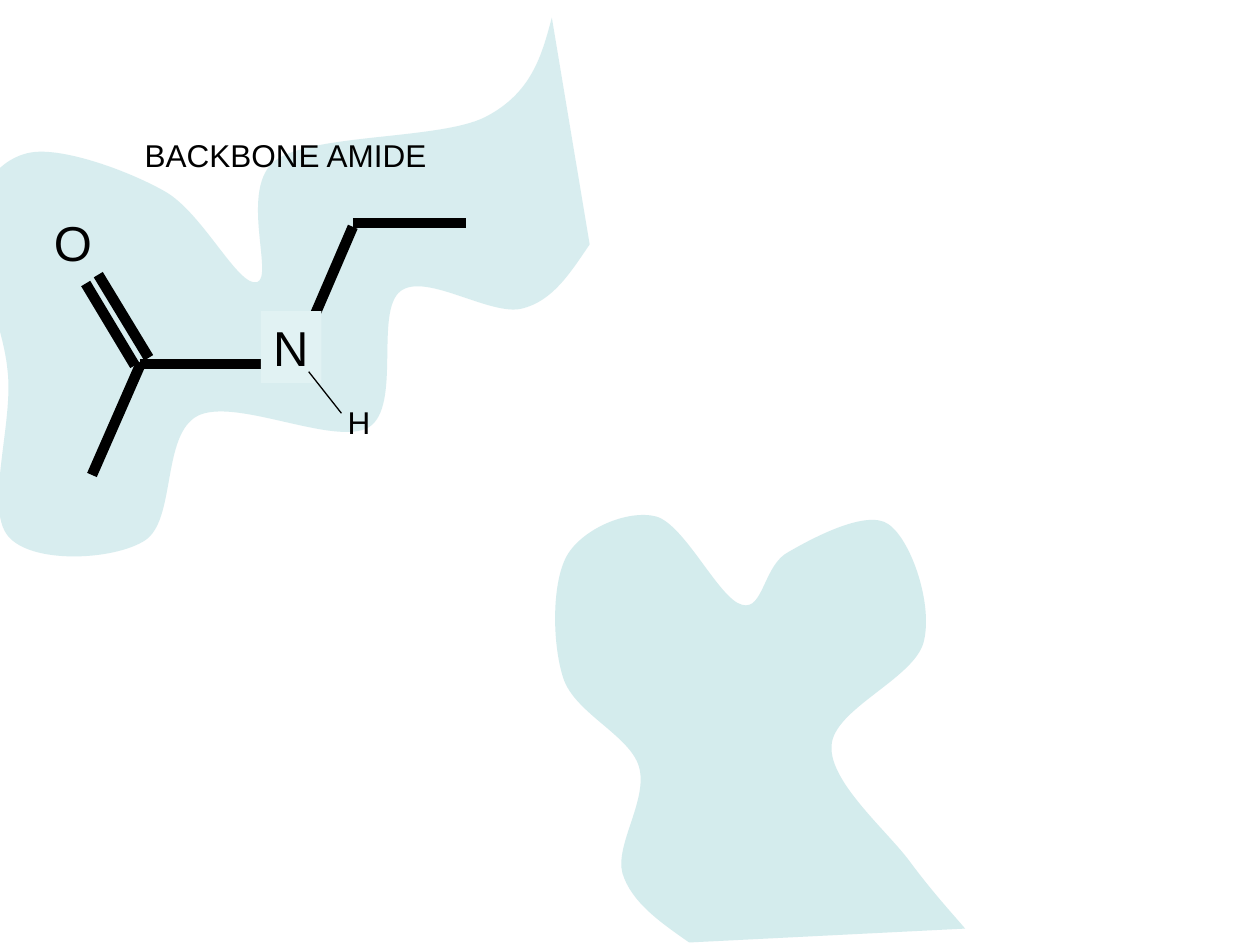
from lxml.etree import SubElement
from pptx import Presentation
from pptx.dml.color import RGBColor
from pptx.enum.shapes import MSO_CONNECTOR, MSO_SHAPE
from pptx.enum.text import MSO_AUTO_SIZE, PP_ALIGN
from pptx.oxml.ns import qn
from pptx.util import Inches, Pt

COLORS = {"surface": "C9E7E9", "nitrogen": "E1F2F3", "ink": "000000"}

AMIDE_POCKET = [
    (4.68, 1.94), (4.53, 2.16), (4.39, 2.39), (4.14, 2.45),
    (3.89, 2.51), (3.38, 2.16), (3.18, 2.31),
    (2.97, 2.47), (3.19, 3.22), (2.93, 3.39),
    (2.66, 3.55), (1.87, 3.15), (1.57, 3.3),
    (1.28, 3.45), (1.4, 4.13), (1.15, 4.29),
    (0.9, 4.45), (0.24, 4.48), (0.06, 4.25),
    (-0.12, 4.02), (0.11, 3.35), (0.06, 2.94),
    (0.02, 2.52), (-0.24, 2.06), (-0.21, 1.77),
    (-0.18, 1.49), (0, 1.25), (0.25, 1.21),
    (0.5, 1.17), (1.01, 1.35), (1.31, 1.52),
    (1.61, 1.69), (1.89, 2.28), (2.04, 2.24),
    (2.18, 2.2), (1.89, 1.49), (2.19, 1.27),
    (2.49, 1.06), (3.49, 1.11), (3.85, 0.93),
    (4.22, 0.74), (4.3, 0.44), (4.38, 0.14),
]
LOWER_POCKET = [
    (5.47, 7.48), (5.24, 7.32), (5.01, 7.16), (4.94, 6.93),
    (4.88, 6.7), (5.15, 6.34), (5.07, 6.08),
    (4.99, 5.83), (4.56, 5.66), (4.47, 5.38),
    (4.38, 5.1), (4.38, 4.62), (4.5, 4.41),
    (4.62, 4.2), (4.98, 4.04), (5.21, 4.1),
    (5.44, 4.17), (5.71, 4.76), (5.89, 4.8),
    (6.06, 4.85), (6.06, 4.48), (6.26, 4.38),
    (6.45, 4.27), (6.88, 4.04), (7.05, 4.16),
    (7.23, 4.28), (7.41, 4.8), (7.33, 5.1),
    (7.25, 5.39), (6.61, 5.63), (6.6, 5.92),
    (6.58, 6.21), (7.06, 6.61), (7.23, 6.85),
    (7.41, 7.09), (7.54, 7.23), (7.66, 7.37),
]
BACKBONE_BONDS = [
    ((1.11, 2.89), (2.34, 2.89)),
    ((2.34, 2.87), (2.8, 1.8)),
    ((1.12, 2.88), (0.73, 3.77)),
    ((1.07, 2.9), (0.68, 2.25)),
    ((1.18, 2.84), (0.78, 2.18)),
]


def rgb(name):
    """Return the named palette colour."""
    return RGBColor.from_string(COLORS[name])


def add_pocket(shapes, points, opacity):
    """Add a translucent outline of cubic curves through the points."""
    (start_x, start_y), *controls = [(Inches(x), Inches(y)) for x, y in points]
    builder = shapes.build_freeform(start_x, start_y)
    builder.add_line_segments(controls, close=False)
    pocket = builder.convert_to_shape()
    pocket.shadow.inherit = False
    pocket.line.fill.background()
    pocket.fill.solid()
    pocket.fill.fore_color.rgb = rgb("surface")
    color = pocket._element.spPr.find(qn("a:solidFill"))[0]
    SubElement(color, qn("a:alpha")).set("val", str(opacity * 1000))

    outline = next(pocket._element.iter(qn("a:path")))
    segments = outline.findall(qn("a:lnTo"))
    for first in range(0, len(segments), 3):
        curve = SubElement(outline, qn("a:cubicBezTo"))
        for segment in segments[first:first + 3]:
            curve.append(segment[0])
            outline.remove(segment)


def add_bond(shapes, start, end, weight=6):
    """Draw a bond between two points."""
    bond = shapes.add_connector(
        MSO_CONNECTOR.STRAIGHT, *(Inches(value) for value in start + end))
    bond.line.color.rgb = rgb("ink")
    bond.line.width = Pt(weight)
    SubElement(bond._element.spPr, qn("a:effectLst"))


def add_label(shapes, text, box, size, fill=None):
    """Add a one-line label, on a filled rectangle if a fill is named."""
    bounds = [Inches(value) for value in box]
    if fill:
        label = shapes.add_shape(MSO_SHAPE.RECTANGLE, *bounds)
        label.shadow.inherit = False
        label.line.fill.background()
        label.fill.solid()
        label.fill.fore_color.rgb = rgb(fill)
    else:
        label = shapes.add_textbox(*bounds)
    frame = label.text_frame
    frame.text = text
    frame.word_wrap = False
    frame.auto_size = MSO_AUTO_SIZE.SHAPE_TO_FIT_TEXT
    paragraph = frame.paragraphs[0]
    paragraph.alignment = PP_ALIGN.LEFT
    font = paragraph.runs[0].font
    font.name = "Arial"
    font.size = Pt(size)
    font.color.rgb = rgb("ink")


def add_amide(shapes):
    """Draw the backbone amide as one group."""
    amide = shapes.add_group_shape().shapes
    for start, end in BACKBONE_BONDS:
        add_bond(amide, start, end)
    add_label(amide, "O", (0.33, 1.64, 0.5, 0.57), 28)
    add_label(amide, "N", (2.07, 2.47, 0.48, 0.57), 28, "nitrogen")
    add_bond(amide, (2.45, 2.95), (2.71, 3.28), 0.75)
    add_label(amide, "H", (2.66, 3.15, 0.38, 0.4), 18)
    add_bond(amide, (2.8, 1.77), (3.7, 1.77))
    add_label(amide, "BACKBONE AMIDE", (1.05, 1.03, 2.45, 0.4), 18)


def main():
    """Build and save the slide."""
    deck = Presentation()
    deck.slide_width, deck.slide_height = Inches(10), Inches(7.5)
    shapes = deck.slides.add_slide(deck.slide_layouts[6]).shapes
    add_pocket(shapes, AMIDE_POCKET, 71)
    add_pocket(shapes, LOWER_POCKET, 79)
    add_amide(shapes)
    deck.save("out.pptx")


if __name__ == "__main__":
    main()
